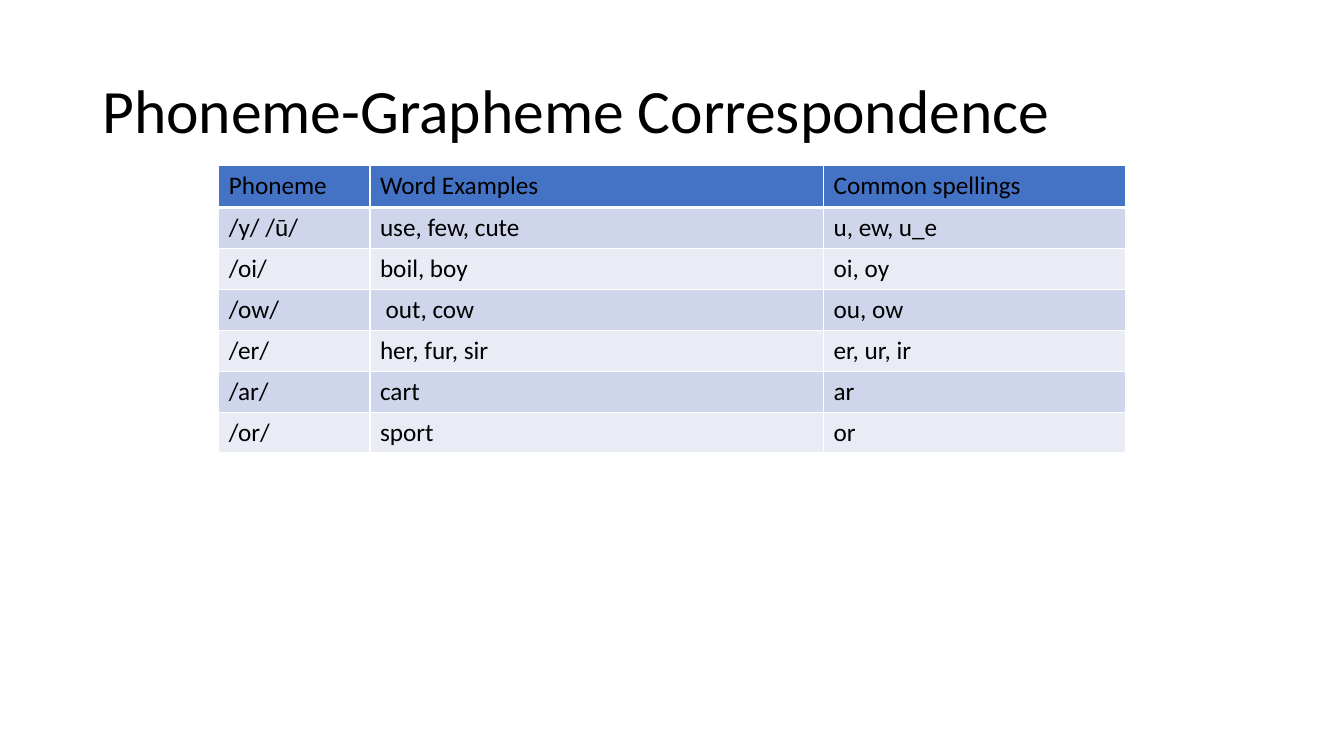
from pptx import Presentation
from pptx.util import Pt
from pptx.dml.color import RGBColor as Rgb
from pptx.enum.text import MSO_ANCHOR as Anchor
from pptx.oxml.ns import qn
from lxml.etree import SubElement as Sub

HUES = {"ink": "000000", "head": "4472C4", "odd": "CFD5EA",
        "even": "E9EBF5", "rule": "FFFFFF"}
ROWS = [
    ("Phoneme", "Word Examples", "Common spellings"),
    ("/y/ /ū/", "use, few, cute", "u, ew, u_e"),
    ("/oi/", "boil, boy", "oi, oy"),
    ("/ow/", " out, cow", "ou, ow"),
    ("/er/", "her, fur, sir", "er, ur, ir"),
    ("/ar/", "cart", "ar"),
    ("/or/", "sport", "or"),
]


def write(frame, text, size=18, font="Calibri", hue="ink", space=1.0):
    para = frame.paragraphs[0]
    para.line_spacing = space
    run = para.add_run()
    run.text = text
    run.font.size = Pt(size)
    run.font.name = font
    run.font.color.rgb = Rgb.from_string(HUES[hue])


class Deck:
    def __init__(self, wide, high):
        self.show = Presentation()
        self.show.slide_width, self.show.slide_height = Pt(wide), Pt(high)
        self.slide = self.show.slides.add_slide(self.show.slide_layouts[6])

    def title(self, text, box):
        frame = self.slide.shapes.add_textbox(*map(Pt, box)).text_frame
        frame.word_wrap = True
        frame.vertical_anchor = Anchor.MIDDLE
        write(frame, text, size=44, space=0.9)

    def edge(self, cell, side, width, spot):
        props = cell._tc.get_or_add_tcPr()
        line = Sub(props, qn("a:ln" + side), w=str(Pt(width)))
        fill = Sub(line, qn("a:solidFill"))
        Sub(fill, qn("a:srgbClr"), val=HUES["rule"])
        props.insert(spot, line)

    def table(self, rows, left, top, cols, highs):
        box = map(Pt, (left, top, sum(cols), sum(highs)))
        grid = self.slide.shapes.add_table(len(rows), len(cols), *box).table
        grid.first_row = grid.horz_banding = False
        for col, wide in zip(grid.columns, cols):
            col.width = Pt(wide)
        for i, words in enumerate(rows):
            grid.rows[i].height = Pt(highs[i])
            tone = "head" if i == 0 else "odd" if i % 2 else "even"
            edges = {"L": 1, "R": 1, "T": 3 if i == 1 else 1,
                     "B": 3 if i == 0 else 1}
            for j, text in enumerate(words):
                cell = grid.cell(i, j)
                write(cell.text_frame, text)
                cell.fill.solid()
                cell.fill.fore_color.rgb = Rgb.from_string(HUES[tone])
                for spot, (side, width) in enumerate(edges.items()):
                    self.edge(cell, side, width, spot)


def main():
    deck = Deck(960, 540)
    deck.title("Phoneme-Grapheme Correspondence", (66, 28.75, 828, 104.4))
    deck.table(ROWS, 156.25, 118.25, (108, 324, 216),
               [30] + [29.25] * (len(ROWS) - 1))
    deck.show.save("out.pptx")


if __name__ == "__main__":
    main()
